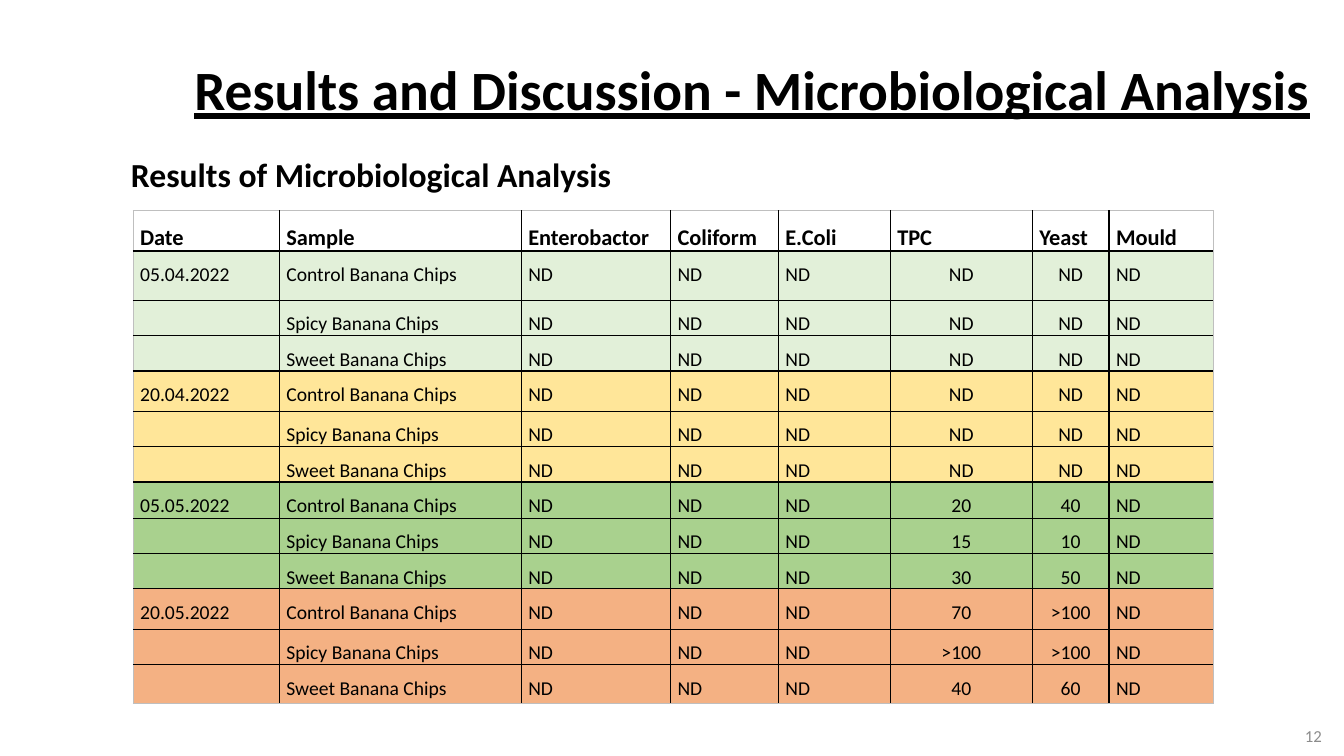
from lxml import etree
from pptx import Presentation
from pptx import util as u
from pptx.dml.color import RGBColor
from pptx.enum import shapes, text
from pptx.oxml.ns import qn

PX = u.Inches(1) // 100

BLACK = RGBColor(0x00, 0x00, 0x00)
WHITE = RGBColor(0xFF, 0xFF, 0xFF)
GRAY = RGBColor(0x8C, 0x8C, 0x8C)
EDGE = RGBColor(0xBF, 0xBF, 0xBF)
PALE_GREEN = RGBColor(0xE2, 0xF0, 0xD9)
YELLOW = RGBColor(0xFF, 0xE6, 0x99)
GREEN = RGBColor(0xA9, 0xD1, 0x8E)
ORANGE = RGBColor(0xF4, 0xB1, 0x83)

HEADERS = ["Date", "Sample", "Enterobactor", "Coliform", "E.Coli", "TPC", "Yeast", "Mould"]
SAMPLES = ["Control Banana Chips", "Spicy Banana Chips", "Sweet Banana Chips"]
# Date, fill, and one (TPC, yeast) pair per sample
TEST_DAYS = [
    ("05.04.2022", PALE_GREEN, [("ND", "ND")] * 3),
    ("20.04.2022", YELLOW, [("ND", "ND")] * 3),
    ("05.05.2022", GREEN, [("20", "40"), ("15", "10"), ("30", "50")]),
    ("20.05.2022", ORANGE, [("70", ">100"), (">100", ">100"), ("40", "60")]),
]
COUNT_COLUMNS = (HEADERS.index("TPC"), HEADERS.index("Yeast"))
COLUMN_WIDTHS = [145, 240, 148, 107, 111, 141, 76, 103]
ROW_HEIGHTS = [28, 49, 30, 30, 40, 30, 30, 36, 30, 30, 40, 30, 39]


def set_all(target, values):
    for name, value in values.items():
        setattr(target, name, value)


class SlideBuilder:
    def __init__(self, slide, font_name):
        self.slide = slide
        self.font_name = font_name

    def add_text(self, frame, content, font, paragraph_format):
        paragraph = frame.paragraphs[0]
        set_all(paragraph, paragraph_format)
        run = paragraph.add_run()
        run.text = content
        set_all(run.font, {"name": self.font_name, "size": u.Pt(font["size"]),
                           "bold": font.get("bold", False),
                           "underline": font.get("underline", False)})
        run.font.color.rgb = font.get("color", BLACK)

    def text_box(self, box, content, font, paragraph_format, frame_format):
        shape = self.slide.shapes.add_textbox(*(value * PX for value in box))
        set_all(shape.text_frame, {"word_wrap": True, **frame_format})
        self.add_text(shape.text_frame, content, font, paragraph_format)

    def panel(self, box, content, font, paragraph_format):
        shape = self.slide.shapes.add_shape(
            shapes.MSO_SHAPE.RECTANGLE, *(value * PX for value in box))
        shape.shadow.inherit = False
        shape.fill.solid()
        shape.fill.fore_color.rgb = WHITE
        shape.line.fill.background()
        set_all(shape.text_frame, {"word_wrap": True,
                                   "vertical_anchor": text.MSO_ANCHOR.TOP})
        self.add_text(shape.text_frame, content, font, paragraph_format)

    def border(self, cell, side, color, width):
        properties = cell._tc.get_or_add_tcPr()
        line = etree.SubElement(properties, qn("a:ln" + side), w=str(u.Pt(width)))
        fill = etree.SubElement(line, qn("a:solidFill"))
        etree.SubElement(fill, qn("a:srgbClr"), val=str(color))

    def table(self, left, top, rows, fills):
        """Draw rows of text; a fill of None leaves the row clear and marks a header."""
        table = self.slide.shapes.add_table(
            len(rows), len(COLUMN_WIDTHS), left * PX, top * PX,
            sum(COLUMN_WIDTHS) * PX, sum(ROW_HEIGHTS) * PX).table
        set_all(table, {"first_row": False, "horz_banding": False})
        for column, width in zip(table.columns, COLUMN_WIDTHS):
            column.width = width * PX
        for row, height in zip(table.rows, ROW_HEIGHTS):
            row.height = height * PX
        last_row, last_column = len(rows) - 1, len(COLUMN_WIDTHS) - 1
        for i, (row, fill) in enumerate(zip(rows, fills)):
            for j, content in enumerate(row):
                cell = table.cell(i, j)
                set_all(cell, {"margin_left": 7 * PX, "margin_right": 7 * PX,
                               "margin_top": 0, "margin_bottom": 0})
                outer = {"L": j == 0, "R": j == last_column,
                         "T": i == 0, "B": i == last_row}
                for side, is_outer in outer.items():
                    self.border(cell, side, *((EDGE, 0.5) if is_outer else (BLACK, 1)))
                if fill is None:
                    cell.fill.background()
                else:
                    cell.fill.solid()
                    cell.fill.fore_color.rgb = fill
                if content:
                    centred = fill is not None and j in COUNT_COLUMNS
                    align = text.PP_ALIGN.CENTER if centred else text.PP_ALIGN.JUSTIFY
                    font = {"size": 16, "bold": True} if fill is None else {"size": 14}
                    self.add_text(cell.text_frame, content, font,
                                  {"alignment": align, "line_spacing": 1.5})


def main():
    presentation = Presentation()
    set_all(presentation, {"slide_width": 1333 * PX, "slide_height": 750 * PX})
    slide = presentation.slides.add_slide(presentation.slide_layouts[6])
    builder = SlideBuilder(slide, "Calibri")

    builder.text_box(
        (171, 50, 1150, 145), "Results and Discussion - Microbiological Analysis",
        {"size": 39.6, "bold": True, "underline": True},
        {"alignment": text.PP_ALIGN.CENTER, "line_spacing": 0.9},
        {"vertical_anchor": text.MSO_ANCHOR.TOP, "margin_top": 12 * PX})
    builder.text_box(
        (1021, 710, 300, 40), "12", {"size": 12, "color": GRAY},
        {"alignment": text.PP_ALIGN.RIGHT},
        {"vertical_anchor": text.MSO_ANCHOR.MIDDLE})
    builder.panel(
        (120, 145, 551, 50), "Results of Microbiological Analysis",
        {"size": 24, "bold": True},
        {"alignment": text.PP_ALIGN.LEFT, "line_spacing": 1.07, "space_after": u.Pt(8)})

    rows, fills = [HEADERS], [None]
    for date, fill, counts in TEST_DAYS:
        for k, (sample, (tpc, yeast)) in enumerate(zip(SAMPLES, counts)):
            rows.append(["" if k else date, sample, "ND", "ND", "ND", tpc, yeast, "ND"])
            fills.append(fill)
    builder.table(132, 209, rows, fills)

    presentation.save("out.pptx")


if __name__ == "__main__":
    main()
